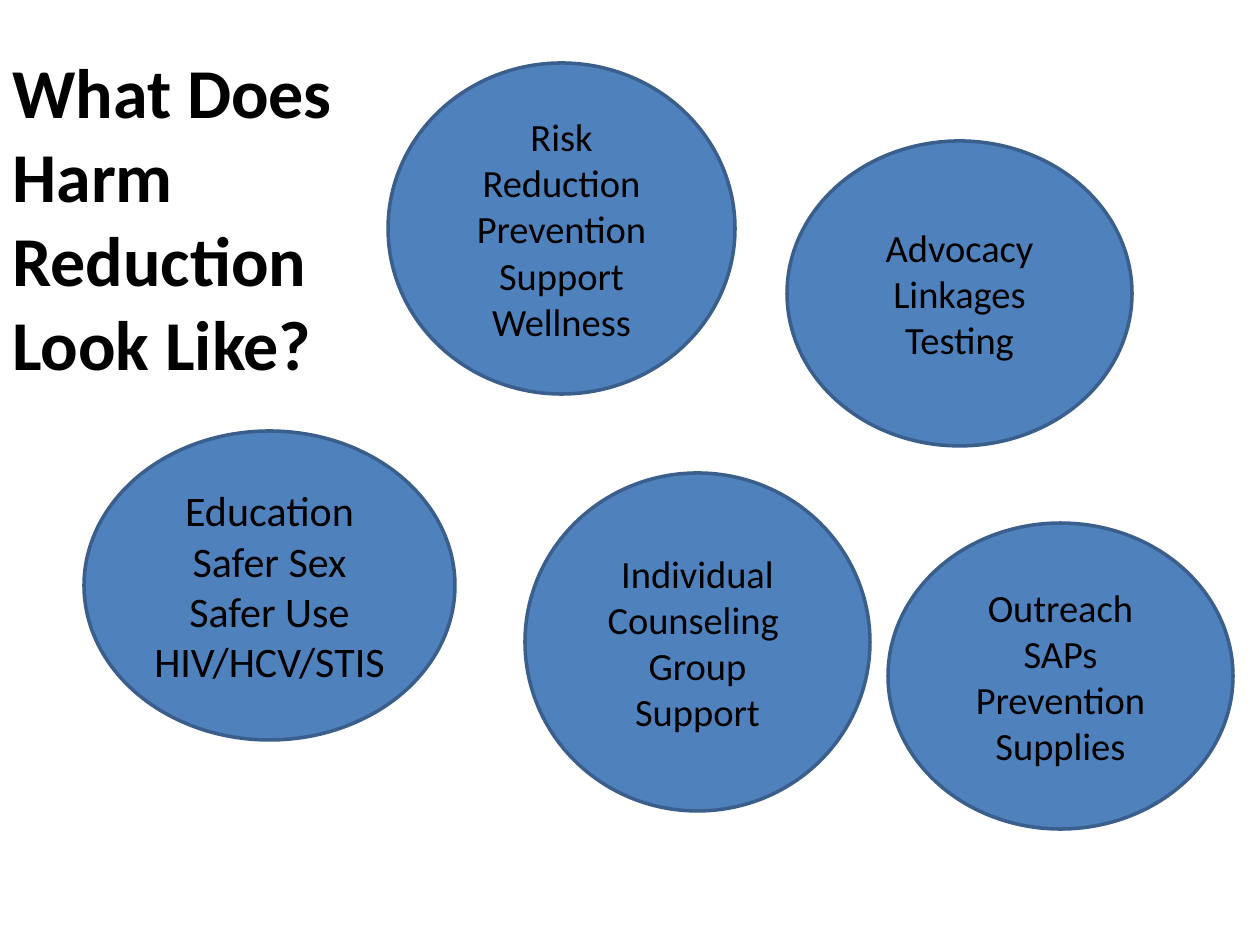
from pptx import Presentation
from pptx.dml.color import RGBColor
from pptx.enum.shapes import MSO_SHAPE
from pptx.enum.text import MSO_ANCHOR, MSO_AUTO_SIZE, PP_ALIGN
from pptx.util import Inches, Pt

PX_PER_INCH = 126
BLUE = RGBColor(0x4F, 0x81, 0xBD)
DARK_BLUE = RGBColor(0x3A, 0x5F, 0x8C)
BLACK = RGBColor(0, 0, 0)

SERVICES = [
    ((388, 63, 347, 331), 22, ["Risk Reduction", "Prevention", "Support", "Wellness"]),
    ((84, 431, 371, 309), 24, ["Education", "Safer Sex", "Safer Use", "HIV/HCV/STIS"]),
    ((525, 473, 345, 338), 22, ["Individual Counseling ", "Group Support"]),
    ((787, 141, 345, 305), 22, ["Advocacy", "Linkages", "Testing"]),
    ((888, 523, 345, 306), 22, ["Outreach", "SAPs", "Prevention Supplies"]),
]


def px(length):
    return Inches(length / PX_PER_INCH)


def write_text(frame, lines, size, bold=False, align=PP_ALIGN.LEFT,
               anchor=MSO_ANCHOR.TOP):
    frame.word_wrap = True
    frame.vertical_anchor = anchor
    for index, line in enumerate(lines):
        paragraph = frame.add_paragraph() if index else frame.paragraphs[0]
        paragraph.alignment = align
        run = paragraph.add_run()
        run.text = line
        run.font.name = "Calibri"
        run.font.size = Pt(size)
        run.font.bold = bold
        run.font.color.rgb = BLACK


def add_service(slide, bounds, size, lines):
    circle = slide.shapes.add_shape(MSO_SHAPE.OVAL, *map(px, bounds))
    circle.shadow.inherit = False
    circle.fill.solid()
    circle.fill.fore_color.rgb = BLUE
    circle.line.color.rgb = DARK_BLUE
    circle.line.width = Pt(2)
    frame = circle.text_frame
    frame.margin_left = frame.margin_right = px(9)
    frame.margin_top = frame.margin_bottom = px(5)
    write_text(frame, lines, size, align=PP_ALIGN.CENTER, anchor=MSO_ANCHOR.MIDDLE)


def add_heading(slide, bounds, lines):
    heading = slide.shapes.add_textbox(*map(px, bounds))
    write_text(heading.text_frame, lines, 40, bold=True)
    heading.text_frame.auto_size = MSO_AUTO_SIZE.SHAPE_TO_FIT_TEXT


def main():
    presentation = Presentation()
    presentation.slide_width = px(1260)
    presentation.slide_height = px(945)
    slide = presentation.slides.add_slide(presentation.slide_layouts[6])
    for bounds, size, lines in SERVICES:
        add_service(slide, bounds, size, lines)
    add_heading(slide, (0, 42, 433, 352), ["What Does Harm Reduction", "Look Like?"])
    presentation.save("out.pptx")


if __name__ == "__main__":
    main()
